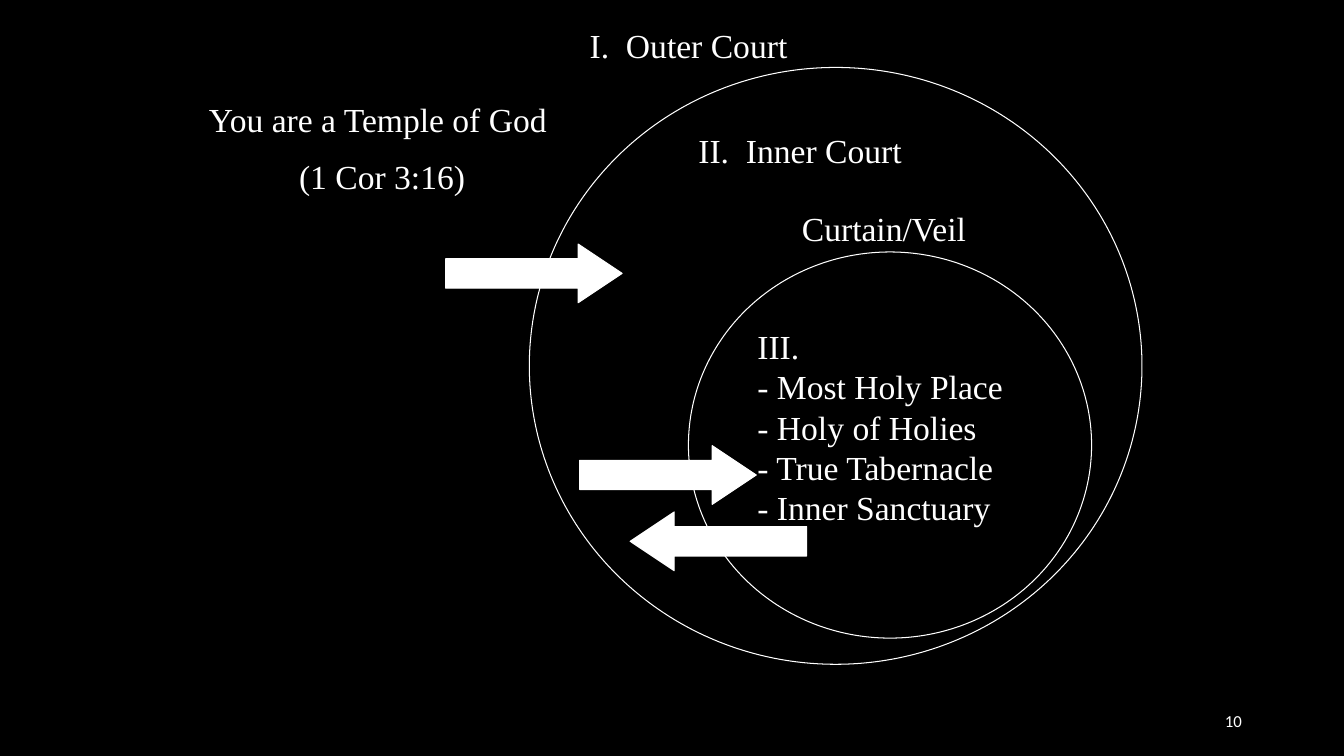
from pptx import Presentation
from pptx import util as u
from pptx.dml.color import RGBColor
from pptx.enum import shapes, text

WHITE = RGBColor(0xFF, 0xFF, 0xFF)
BLACK = RGBColor(0, 0, 0)
LEFT, MID, RIGHT = text.PP_ALIGN.LEFT, text.PP_ALIGN.CENTER, text.PP_ALIGN.RIGHT
TOP, CENTRE = text.MSO_ANCHOR.TOP, text.MSO_ANCHOR.MIDDLE
OVAL = shapes.MSO_SHAPE.OVAL
ARROW = shapes.MSO_SHAPE.RIGHT_ARROW


class Board:
    """Holds the style and the current slide."""

    def __init__(self, slide):
        self.slide = slide
        self.font = {"name": "Times New Roman", "size": u.Pt(24), "bold": False}
        fill = slide.background.fill
        fill.solid()
        fill.fore_color.rgb = BLACK

    def letter(self, shape, lines, align=LEFT, anchor=TOP, gap=0, **font):
        frame = shape.text_frame
        form = {"word_wrap": True, "auto_size": text.MSO_AUTO_SIZE.NONE,
                "vertical_anchor": anchor}
        for key, value in form.items():
            setattr(frame, key, value)
        for i, line in enumerate(lines):
            para = frame.paragraphs[0] if i == 0 else frame.add_paragraph()
            para.text = line
            para.alignment = align
            if i and gap:
                para.space_before = u.Pt(gap)
            for key, value in {**self.font, **font}.items():
                setattr(para.font, key, value)
            para.font.color.rgb = WHITE

    def title(self, box, lines, **form):
        shape = self.slide.shapes.title
        sides = ("left", "top", "width", "height")
        for side, value in zip(sides, box):
            setattr(shape, side, u.Cm(value))
        self.letter(shape, lines, **form)

    def label(self, box, line, **form):
        shape = self.slide.shapes.add_textbox(*map(u.Cm, box))
        self.letter(shape, [line], **form)

    def shape(self, kind, box):
        shape = self.slide.shapes.add_shape(kind, *map(u.Cm, box))
        shape.shadow.inherit = False
        shape.line.color.rgb = WHITE
        shape.line.width = u.Pt(0.75)
        return shape

    def ring(self, box):
        shape = self.shape(OVAL, box)
        shape.fill.background()
        return shape

    def arrow(self, left, top, turn=0):
        shape = self.shape(ARROW, (left, top, 4.45, 1.48))
        shape.fill.solid()
        shape.fill.fore_color.rgb = WHITE
        shape.adjustments[0] = 0.5
        shape.adjustments[1] = 0.75
        shape.rotation = turn


def main():
    deck = Presentation()
    deck.slide_width, deck.slide_height = u.Cm(33.87), u.Cm(19.05)
    slide = deck.slides.add_slide(deck.slide_layouts[5])
    board = Board(slide)

    # Heading
    board.title((4.65, 2.36, 9.96, 2.82),
                ["You are a Temple of God ", "(1 Cor 3:16)"], align=MID, gap=12)

    # Courts
    board.ring((13.34, 1.7, 15.44, 15.04))
    holy = board.ring((17.35, 6.35, 10.16, 9.73))
    board.letter(holy, ["III.", "- Most Holy Place", "- Holy of Holies",
                        "- True Tabernacle", "- Inner Sanctuary"], anchor=CENTRE)
    holy.text_frame.margin_bottom = u.Cm(1.04)

    # Ways in and out
    board.arrow(14.61, 11.23)
    board.arrow(15.88, 12.9, turn=180)
    board.arrow(11.23, 6.15)

    # Labels
    board.label((14.61, 0.51, 7.19, 1.27), "I.  Outer Court")
    board.label((17.35, 3.15, 7.19, 1.27), "II.  Inner Court")
    board.label((19.96, 5.11, 4.95, 1.27), "Curtain/Veil")

    # Page number
    board.label((23.93, 17.65, 7.62, 1.02), "10", align=RIGHT, anchor=CENTRE,
                name="Calibri", size=u.Pt(12))

    deck.save("out.pptx")


if __name__ == "__main__":
    main()
